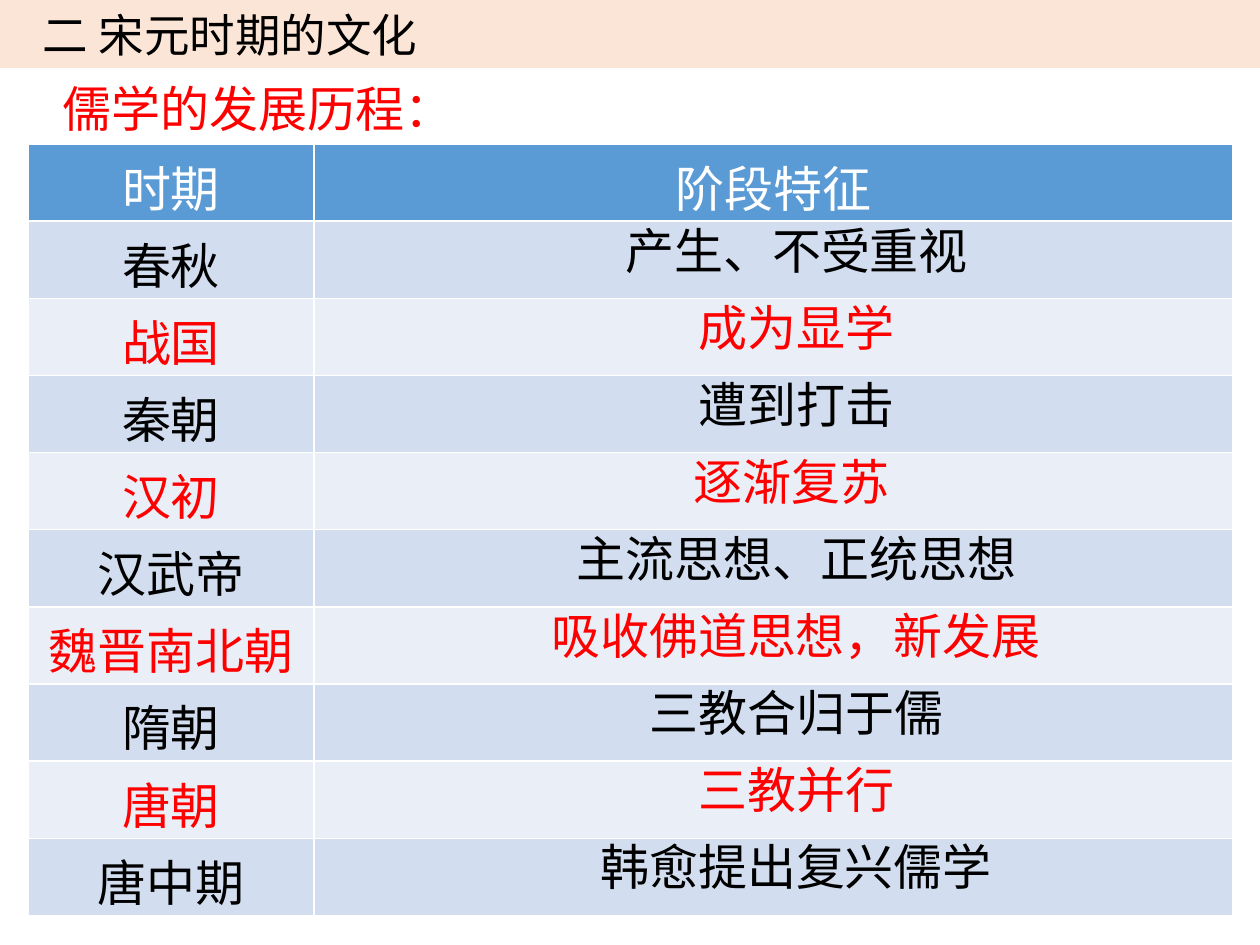
from pptx import Presentation
from pptx.dml.color import RGBColor
from pptx.enum.shapes import MSO_SHAPE as Shape
from pptx.enum.text import MSO_ANCHOR as Anchor, MSO_AUTO_SIZE as AutoSize, PP_ALIGN as Align
from pptx.oxml import parse_xml
from pptx.oxml.ns import nsdecls
from pptx.util import Pt

EMU_PER_PX = 914400 / 126
BLACK, RED, WHITE = "000000", "FF0000", "FFFFFF"
HEADER_BLUE, BANDS = "5B9BD5", ("D2DEEF", "EAEFF7")
TITLE_FILL = "FBE5D6"


def px(length):
    return round(length * EMU_PER_PX)


def rgb(color):
    return RGBColor.from_string(color)


class SlideBuilder:
    font_name = "Noto Sans CJK SC"
    size = 28

    def __init__(self, slide):
        self.slide = slide

    def add_text(self, frame, text, color, align=Align.LEFT, size=None, **frame_format):
        for name, value in frame_format.items():
            setattr(frame, name, value)
        paragraph = frame.paragraphs[0]
        paragraph.alignment = align
        run = paragraph.add_run()
        run.text = text
        font_format = {"name": self.font_name, "size": Pt(size or self.size)}
        for name, value in font_format.items():
            setattr(run.font, name, value)
        run.font.color.rgb = rgb(color)
        # East Asian characters take their font from a:ea
        run.font._element.append(
            parse_xml(f'<a:ea {nsdecls("a")} typeface="{self.font_name}"/>'))

    def banner(self, width, height, text):
        bar = self.slide.shapes.add_shape(Shape.RECTANGLE, 0, 0, px(width), px(height))
        bar.shadow.inherit = False
        bar.fill.solid()
        bar.fill.fore_color.rgb = rgb(TITLE_FILL)
        bar.line.fill.background()
        self.add_text(bar.text_frame, text, BLACK, size=26, word_wrap=True,
                      margin_left=px(43), vertical_anchor=Anchor.MIDDLE)

    def label(self, left, top, width, text, color, wrap=False):
        box = self.slide.shapes.add_textbox(px(left), px(top), px(width), px(72))
        self.add_text(box.text_frame, text, color, word_wrap=wrap,
                      auto_size=AutoSize.SHAPE_TO_FIT_TEXT)

    def cell(self, cell, text, fill, color):
        cell.fill.solid()
        cell.fill.fore_color.rgb = rgb(fill)
        cell.margin_bottom = 0
        if text:
            self.add_text(cell.text_frame, text, color, Align.CENTER)
        borders = [parse_xml(
            f'<a:{side} {nsdecls("a")} w="12700"><a:solidFill>'
            f'<a:srgbClr val="{WHITE}"/></a:solidFill></a:{side}>')
            for side in ("lnL", "lnR", "lnT", "lnB")]
        properties = cell._tc.get_or_add_tcPr()
        for position, border in enumerate(borders):
            properties.insert(position, border)

    def table(self, left, top, column_widths, row_height, rows):
        """Each row is (texts, fill, text colour)."""
        table = self.slide.shapes.add_table(
            len(rows), len(column_widths), px(left), px(top),
            px(sum(column_widths)), px(row_height * len(rows))).table
        for column, width in zip(table.columns, column_widths):
            column.width = px(width)
        for row, (texts, fill, color) in zip(table.rows, rows):
            row.height = px(row_height)
            for cell, text in zip(row.cells, texts):
                self.cell(cell, text, fill, color)


STAGES = [
    ("春秋", "产生、不受重视"),
    ("战国", "成为显学"),
    ("秦朝", "遭到打击"),
    ("汉初", "逐渐复苏"),
    ("汉武帝", "主流思想、正统思想"),
    ("魏晋南北朝", "吸收佛道思想，新发展"),
    ("隋朝", "三教合归于儒"),
    ("唐朝", "三教并行"),
    ("唐中期", "韩愈提出复兴儒学"),
]
WIDER_BOX = {"逐渐复苏": 232}
CHARACTER, INSETS = 49, 26
TRAIT_CENTER, TRAIT_TOP, TRAIT_STEP = 797, 214, 77


def main():
    deck = Presentation()
    deck.slide_width, deck.slide_height = px(1260), px(945)
    builder = SlideBuilder(deck.slides.add_slide(deck.slide_layouts[6]))

    # Title bar
    builder.banner(1260, 68, "二 宋元时期的文化")

    # Table of periods, with banded rows in alternating text colours
    rows = [(("时期", "阶段特征"), HEADER_BLUE, WHITE)]
    for index, (period, _) in enumerate(STAGES):
        rows.append(((period, ""), BANDS[index % 2], (BLACK, RED)[index % 2]))
    builder.table(28, 144, (286, 919), 76, rows)

    # Heading above the table
    builder.label(50, 72, 421, "儒学的发展历程：", RED)

    # Trait of each period, centred over the second column
    for index, (_, trait) in enumerate(STAGES):
        width = WIDER_BOX.get(trait, len(trait) * CHARACTER + INSETS)
        builder.label(TRAIT_CENTER - width // 2, TRAIT_TOP + index * TRAIT_STEP, width,
                      trait, (BLACK, RED)[index % 2], wrap=trait in WIDER_BOX)

    deck.save("out.pptx")


if __name__ == "__main__":
    main()
